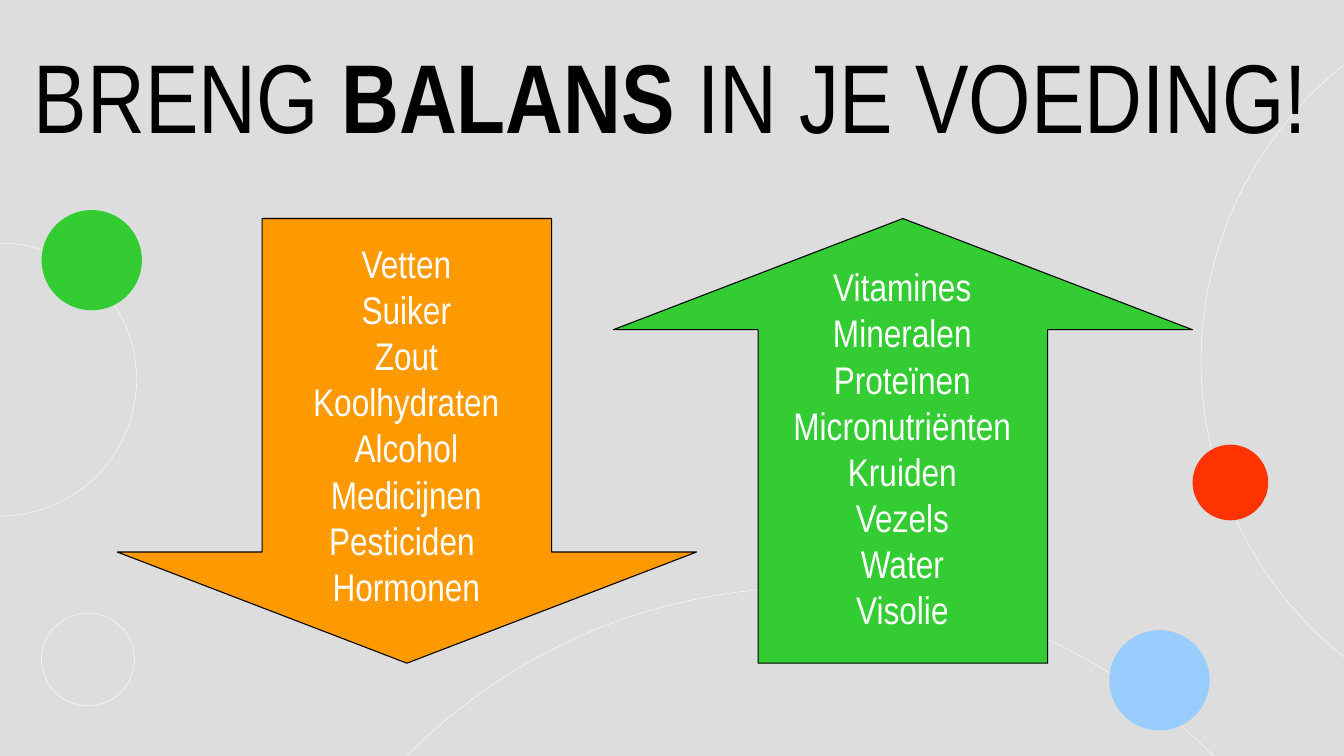
from pptx import Presentation
from pptx.dml.color import RGBColor
from pptx.enum.shapes import MSO_SHAPE as Shape
from pptx.enum.text import MSO_ANCHOR as Anchor, MSO_AUTO_SIZE as AutoSize, PP_ALIGN as Align
from pptx.util import Pt

PX = 9144  # EMU per px, 100 px to the inch
FONT = "Arial Narrow"
BLACK = RGBColor(0x00, 0x00, 0x00)
WHITE = RGBColor(0xFF, 0xFF, 0xFF)
GREY = RGBColor(0xDD, 0xDD, 0xDD)
GREEN = RGBColor(0x33, 0xCC, 0x33)
ORANGE = RGBColor(0xFF, 0x99, 0x00)
RED = RGBColor(0xFF, 0x33, 0x00)
BLUE = RGBColor(0x99, 0xCC, 0xFF)

REDUCE = ["Vetten", "Suiker", "Zout", "Koolhydraten",
          "Alcohol", "Medicijnen", "Pesticiden ", "Hormonen"]
INCREASE = ["Vitamines", "Mineralen", "Proteïnen", "Micronutriënten",
            "Kruiden", "Vezels", "Water", "Visolie"]

# Left, top, diameter
RINGS = [(1126, -16, 709), (228, 551, 1063), (39, 575, 87), (-128, 228, 256)]
DOTS = [(1040, 591, 94, BLUE), (1118, 417, 71, RED), (39, 197, 94, GREEN)]


def emu(*lengths):
    return [length * PX for length in lengths]


def set_format(target, values):
    for name, value in values.items():
        setattr(target, name, value)


def add_figure(slide, kind, box, fill=None, line=None, weight=0.25):
    figure = slide.shapes.add_shape(kind, *emu(*box))
    figure.shadow.inherit = False
    for part, colour in ((figure.fill, fill), (figure.line.fill, line)):
        if colour is None:
            part.background()
        else:
            part.solid()
            part.fore_color.rgb = colour
    if line is not None:
        figure.line.width = Pt(weight)
    return figure


def add_run(paragraph, text, size, colour, bold=False):
    run = paragraph.add_run()
    run.text = text
    set_format(run.font, {"name": FONT, "size": Pt(size), "bold": bold})
    run.font.color.rgb = colour


def add_circles(slide):
    for left, top, size in RINGS:
        add_figure(slide, Shape.OVAL, (left, top, size, size), line=WHITE)
    for left, top, size, colour in DOTS:
        add_figure(slide, Shape.OVAL, (left, top, size, size), fill=colour)


def add_food_arrow(slide, box, kind, colour, foods, text_offset):
    left, top, width, _ = box
    arrow = add_figure(slide, kind, box, colour, BLACK, 0.75)
    arrow.adjustments[0], arrow.adjustments[1] = 0.5, 0.25

    # Food list, centred across the arrow
    list_width, list_height = 228, 357
    food_list = slide.shapes.add_textbox(*emu(
        left + (width - list_width) // 2, top + text_offset,
        list_width, list_height)).text_frame
    set_format(food_list, {"word_wrap": True,
                           "auto_size": AutoSize.SHAPE_TO_FIT_TEXT})
    for index, food in enumerate(foods):
        paragraph = food_list.add_paragraph() if index else food_list.paragraphs[0]
        paragraph.alignment = Align.CENTER
        add_run(paragraph, food, 26, WHITE)


def add_title(slide, box):
    title = slide.shapes.title
    set_format(title, dict(zip(("left", "top", "width", "height"), emu(*box))))
    frame = title.text_frame
    margin_x, margin_y = emu(11, 6)
    set_format(frame, {
        "margin_left": margin_x, "margin_right": margin_x,
        "margin_top": margin_y, "margin_bottom": margin_y,
        "word_wrap": True, "vertical_anchor": Anchor.TOP,
        "auto_size": AutoSize.SHAPE_TO_FIT_TEXT})
    heading = frame.paragraphs[0]
    heading.alignment = Align.CENTER
    for text, bold in (("BRENG ", False), ("BALANS", True),
                       (" IN JE VOEDING!", False)):
        add_run(heading, text, 66, BLACK, bold)
    # Bring the title in front of the rings
    title.element.getparent().append(title.element)


def build_balance_slide(deck):
    slide = deck.slides.add_slide(deck.slide_layouts.get_by_name("Title Only"))
    slide.background.fill.solid()
    slide.background.fill.fore_color.rgb = GREY
    add_circles(slide)
    add_food_arrow(slide, (575, 205, 543, 417), Shape.UP_ARROW, GREEN, INCREASE, 37)
    add_food_arrow(slide, (110, 205, 543, 417), Shape.DOWN_ARROW, ORANGE, REDUCE, 15)
    add_title(slide, (11, 28, 1236, 121))


def main():
    deck = Presentation()
    deck.slide_width, deck.slide_height = emu(1260, 709)
    build_balance_slide(deck)
    deck.save("out.pptx")


if __name__ == "__main__":
    main()
